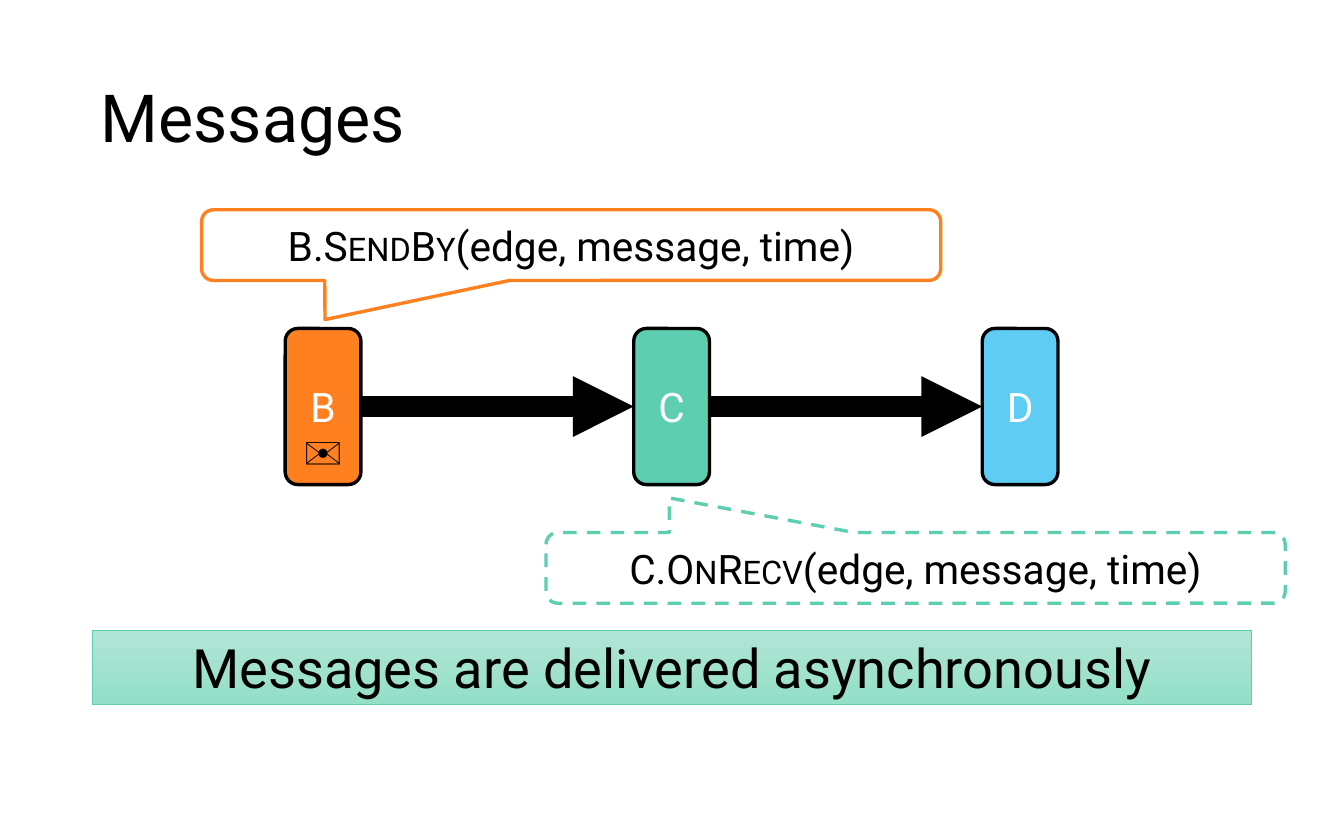
from itertools import pairwise
from lxml.etree import SubElement
from pptx import Presentation
from pptx.dml.color import RGBColor
from pptx.enum.dml import MSO_LINE as Dash
from pptx.enum.shapes import MSO_CONNECTOR as Link, MSO_SHAPE as Kind
from pptx.enum.text import MSO_ANCHOR as Anchor, MSO_AUTO_SIZE as Fit, PP_ALIGN as Align
from pptx.oxml.ns import qn
from pptx.util import Inches, Pt

BLACK = RGBColor(0x00, 0x00, 0x00)
WHITE = RGBColor(0xFF, 0xFF, 0xFF)
ORANGE = RGBColor(0xFF, 0x80, 0x21)
GREEN = RGBColor(0x5D, 0xCE, 0xAF)
BLUE = RGBColor(0x5E, 0xCC, 0xF3)
PALE = RGBColor(0xB1, 0xE5, 0xD5)
MINT = RGBColor(0x93, 0xDF, 0xC7)
FONT = "Roboto"
WIDE, HIGH = Inches(16.54), Inches(10)


def place(box):
    """Turn a box in percent of the slide into lengths."""
    x, y, w, h = box
    return [int(part * size / 100) for part, size in zip((x, y, w, h), (WIDE, HIGH) * 2)]


def write(shape, *texts, size=36, color=BLACK, bold=False, align=Align.CENTER,
          anchor=Anchor.MIDDLE, small=None, space=None):
    """Fill a shape with one paragraph; the run at index small is in small caps."""
    frame = shape.text_frame
    frame.auto_size = Fit.NONE
    frame.word_wrap = True
    frame.vertical_anchor = anchor
    para = frame.paragraphs[0]
    para.alignment = align
    para.line_spacing = space
    for i, text in enumerate(texts):
        run = para.add_run()
        run.text = text
        font = run.font
        font.name, font.size, font.bold = FONT, Pt(size), bold
        font.color.rgb = color
        if i == small:
            font._element.set("cap", "small")


def draw(slide, kind, box, fill, line, width=3):
    """Add a filled and outlined preset shape."""
    shape = slide.shapes.add_shape(kind, *place(box))
    shape.shadow.inherit = False
    shape.fill.solid()
    shape.fill.fore_color.rgb = fill
    shape.line.color.rgb = line
    shape.line.width = Pt(width)
    return shape


def head(slide, box):
    """Place and format the title."""
    title = slide.shapes.title
    title.left, title.top, title.width, title.height = place(box)
    write(title, "Messages", size=58.7, align=Align.LEFT, space=0.9)


def arrow(slide):
    """Add a thick arrow that is yet to be joined."""
    link = slide.shapes.add_connector(Link.STRAIGHT, 0, 0, 0, 0)
    link.line.color.rgb = BLACK
    link.line.width = Pt(18)
    SubElement(link.line._get_or_add_ln(), qn("a:tailEnd"), type="triangle")
    SubElement(link._element.spPr, qn("a:effectLst"))
    return link


def chain(slide, box, nodes, share=0.098):
    """Draw evenly spaced nodes joined by arrows."""
    x, y, w, h = box
    wide = w * share
    step = (w - wide) / (len(nodes) - 1)
    links = [arrow(slide) for _ in nodes[1:]]
    cells = []
    for i, (name, color) in enumerate(nodes):
        cell = draw(slide, Kind.ROUNDED_RECTANGLE, (x + i * step, y, wide, h), color, BLACK)
        write(cell, name, color=WHITE)
        cells.append(cell)
    for link, (start, end) in zip(links, pairwise(cells)):
        link.begin_connect(start, 3)
        link.end_connect(end, 1)


def mail(slide, box):
    """Put the message symbol in its box."""
    note = slide.shapes.add_textbox(*place(box))
    write(note, "✉", size=48, bold=True, anchor=Anchor.TOP)


def call(slide, box, owner, name, color, tip, dash=None):
    """Draw a callout with a method signature."""
    bubble = draw(slide, Kind.ROUNDED_RECTANGULAR_CALLOUT, box, WHITE, color)
    bubble.line.dash_style = dash
    for i, value in enumerate((-0.333, tip, 0.167)):
        bubble.adjustments[i] = value
    write(bubble, owner + ".", name, "(edge, message, time)", small=1)


def banner(slide, box):
    """Draw the closing statement on a gradient bar."""
    bar = draw(slide, Kind.RECTANGLE, box, PALE, GREEN, 0.5)
    bar.fill.gradient()
    bar.fill.gradient_angle = 270
    for stop, color in zip(bar.fill.gradient_stops, (PALE, MINT)):
        stop.color.rgb = color
    write(bar, "Messages are delivered asynchronously", size=48, anchor=Anchor.TOP)


def main():
    """Build and save the slide."""
    deck = Presentation()
    deck.slide_width, deck.slide_height = WIDE, HIGH
    slide = deck.slides.add_slide(deck.slide_layouts[5])
    head(slide, (6.89, 5.3, 86.22, 19.3))
    chain(slide, (21.22, 40.4, 57.5, 19.2), [("B", ORANGE), ("C", GREEN), ("D", BLUE)])
    call(slide, (15, 25.8, 55, 8.7), "B", "SendBy", ORANGE, 1.053)
    call(slide, (40.63, 65.5, 55, 8.7), "C", "OnRecv", GREEN, -0.989, Dash.DASH)
    mail(slide, (20.62, 50.9, 6.83, 9.1))
    banner(slide, (6.89, 77.5, 86.22, 9.1))
    deck.save("out.pptx")


if __name__ == "__main__":
    main()
